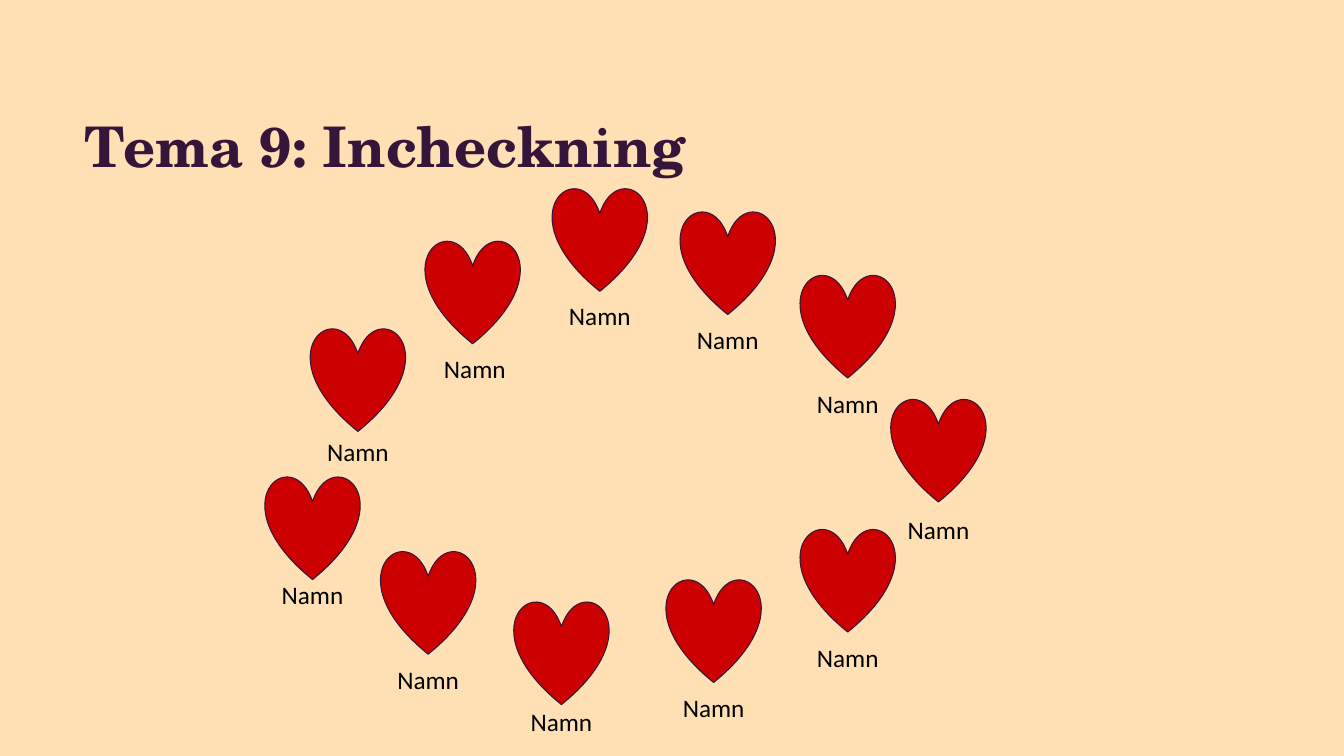
from pptx import Presentation
from pptx.dml.color import RGBColor
from pptx.enum import shapes, text
from pptx.util import Pt

SAND = RGBColor(0xFF, 0xE0, 0xB4)
PLUM = RGBColor(0x35, 0x15, 0x39)
RED = RGBColor(0xCC, 0x00, 0x00)
BLACK = RGBColor(0, 0, 0)

HEART_W, HEART_H = 67.7, 74.2
NAME_W, NAME_H = 87.8, 36

# Heart left, heart top, name top, sideways shift of the name from the heart's centre
PARTICIPANTS = [
    (221.8, 234, 304.6, 0),
    (303.8, 171.4, 245.5, 1.5),
    (394.6, 133.9, 207.4, 0),
    (486, 150.5, 224.6, 0),
    (571.7, 195.8, 270, 0),
    (636.5, 284.4, 360, 0),
    (571.7, 377.3, 451.4, 0),
    (475.9, 413.3, 487.4, 0),
    (367.2, 429.1, 497.5, 0),
    (272, 393.1, 467.3, 0),
    (189.4, 339.8, 406.8, 0),
]


def add_run(paragraph, wording, font_name, size, color, bold=False):
    run = paragraph.add_run()
    run.text = wording
    run.font.name = font_name
    run.font.size = Pt(size)
    run.font.color.rgb = color
    run.font.bold = bold


def set_margins(frame, margin):
    frame.margin_left = frame.margin_right = Pt(margin)
    frame.margin_top = frame.margin_bottom = Pt(margin)


def place_title(slide, left, top, width, height):
    title = slide.shapes.title
    title.left, title.top = Pt(left), Pt(top)
    title.width, title.height = Pt(width), Pt(height)
    frame = title.text_frame
    set_margins(frame, 0)
    frame.word_wrap = True
    frame.auto_size = text.MSO_AUTO_SIZE.NONE
    frame.vertical_anchor = text.MSO_ANCHOR.MIDDLE
    heading = frame.paragraphs[0]
    heading.alignment = text.PP_ALIGN.LEFT
    heading.line_spacing = Pt(68)
    add_run(heading, "Tema 9: Incheckning", "TeX Gyre Schola", 40, PLUM, True)


def add_heart(slide, left, top):
    heart = slide.shapes.add_shape(shapes.MSO_SHAPE.HEART, Pt(left), Pt(top),
                                   Pt(HEART_W), Pt(HEART_H))
    heart.shadow.inherit = False
    heart.fill.solid()
    heart.fill.fore_color.rgb = RED
    heart.line.color.rgb = PLUM
    heart.line.width = Pt(0.75)


def add_name(slide, center, top):
    name = slide.shapes.add_textbox(Pt(center - NAME_W / 2), Pt(top),
                                    Pt(NAME_W), Pt(NAME_H))
    frame = name.text_frame
    set_margins(frame, 7.2)
    frame.word_wrap = True
    caption = frame.paragraphs[0]
    caption.alignment = text.PP_ALIGN.CENTER
    add_run(caption, "Namn", "Calibri", 18, BLACK)


def build_check_in_slide(deck):
    slide = deck.slides.add_slide(deck.slide_layouts[5])
    slide.background.fill.solid()
    slide.background.fill.fore_color.rgb = SAND
    place_title(slide, 60.5, 57.6, 839.5, 72.7)
    for left, top, _, _ in PARTICIPANTS:
        add_heart(slide, left, top)
    for left, _, name_top, shift in PARTICIPANTS:
        add_name(slide, left + HEART_W / 2 + shift, name_top)


def main():
    deck = Presentation()
    deck.slide_width, deck.slide_height = Pt(960), Pt(540)
    build_check_in_slide(deck)
    deck.save("out.pptx")


if __name__ == "__main__":
    main()
